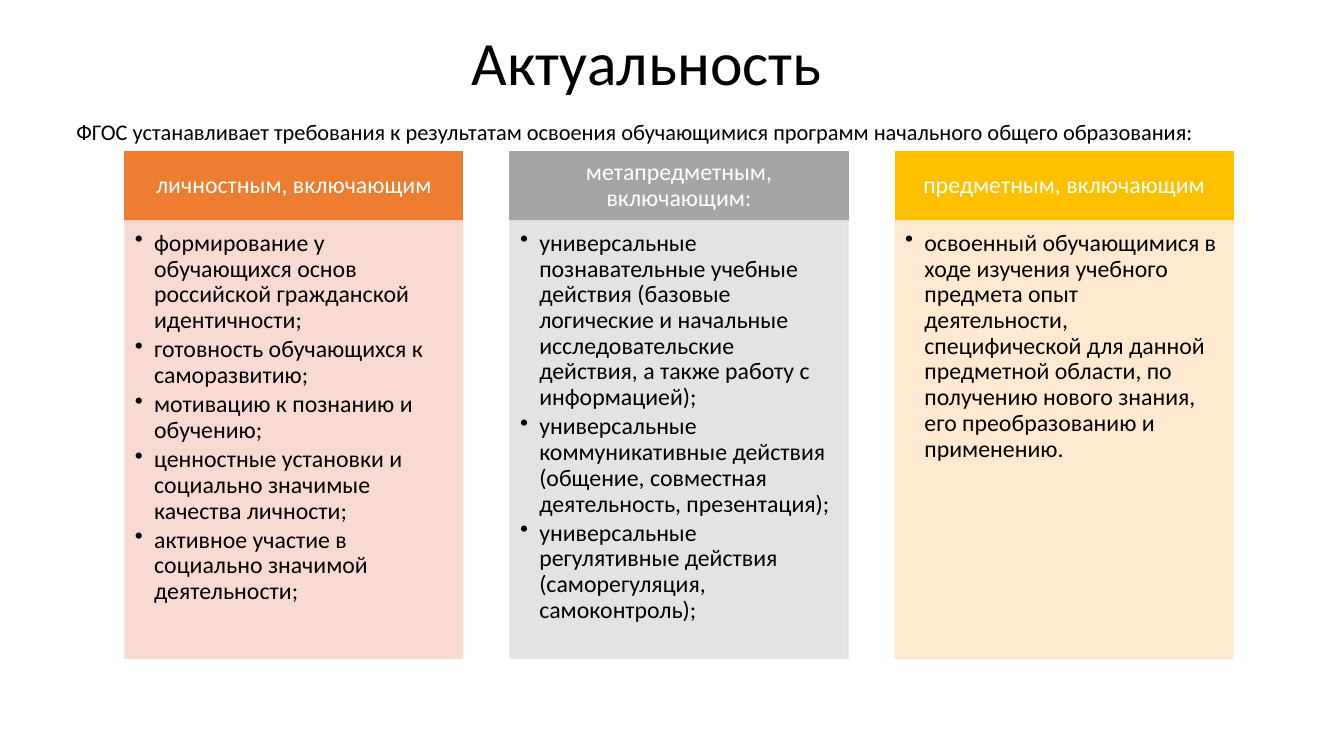
from lxml import etree
from pptx import Presentation
from pptx.dml.color import RGBColor
from pptx.enum.shapes import MSO_SHAPE
from pptx.enum.text import MSO_ANCHOR, PP_ALIGN
from pptx.oxml.ns import qn
from pptx.util import Inches, Pt

RECTANGLE = MSO_SHAPE.RECTANGLE
TOP, MIDDLE = MSO_ANCHOR.TOP, MSO_ANCHOR.MIDDLE
LEFT, CENTER = PP_ALIGN.LEFT, PP_ALIGN.CENTER

COLORS = {
    "text": "000000",
    "header_text": "FFFFFF",
    "personal": "ED7D31",
    "personal_tint": "F8D7CE",
    "meta": "A5A5A5",
    "meta_tint": "E1E1E1",
    "subject": "FFC000",
    "subject_tint": "FFE8CC",
}

COLUMNS = [
    ("personal", "личностным, включающим", [
        "формирование у обучающихся основ российской гражданской идентичности;",
        "готовность обучающихся к саморазвитию;",
        "мотивацию к познанию и обучению;",
        "ценностные установки и социально значимые качества личности;",
        "активное участие в социально значимой деятельности;",
    ]),
    ("meta", "метапредметным, включающим:", [
        "универсальные познавательные учебные действия (базовые логические и "
        "начальные исследовательские действия, а также работу с информацией);",
        "универсальные коммуникативные действия (общение, совместная "
        "деятельность, презентация);",
        "универсальные регулятивные действия (саморегуляция, самоконтроль);",
    ]),
    ("subject", "предметным, включающим", [
        "освоенный обучающимися в ходе изучения учебного предмета опыт "
        "деятельности, специфической для данной предметной области, по "
        "получению нового знания, его преобразованию и применению.",
    ]),
]

COLUMN_LEFT, COLUMN_STEP, COLUMN_WIDTH = 1.24, 3.82, 3.35
HEADER_TOP, HEADER_HEIGHT, BODY_HEIGHT = 1.5, 0.69, 4.34
HEADER_MARGINS = (0.13, 0.08, 0.13, 0.08)
BODY_MARGINS = (0.1, 0.1, 0.13, 0.15)
BULLET_INDENT = 0.19


class SlideBuilder:
    font_name = "Calibri"
    line_spacing = 0.9

    def __init__(self, slide):
        self.slide = slide

    def fill_text(self, shape, lines, size, color="text", anchor=TOP, align=LEFT,
                  margins=(0.1, 0.05, 0.1, 0.05), bullets=False):
        left, top, right, bottom = map(Inches, margins)
        frame_format = {
            "word_wrap": True, "vertical_anchor": anchor,
            "margin_left": left, "margin_top": top,
            "margin_right": right, "margin_bottom": bottom,
        }
        paragraph_format = {"alignment": align, "line_spacing": self.line_spacing}
        if bullets:
            paragraph_format["space_after"] = Pt(2.5)
        font_format = {"name": self.font_name, "size": Pt(size)}

        frame = shape.text_frame
        self.apply(frame, frame_format)
        for index, line in enumerate(lines):
            paragraph = frame.add_paragraph() if index else frame.paragraphs[0]
            if bullets:
                self.add_bullet(paragraph)
            self.apply(paragraph, paragraph_format)
            run = paragraph.add_run()
            run.text = line
            self.apply(run.font, font_format)
            run.font.color.rgb = RGBColor.from_string(COLORS[color])

    @staticmethod
    def apply(target, values):
        """Set every attribute named in values on target."""
        for name, value in values.items():
            setattr(target, name, value)

    @staticmethod
    def add_bullet(paragraph):
        properties = paragraph._p.get_or_add_pPr()
        properties.set("marL", str(Inches(BULLET_INDENT)))
        properties.set("indent", str(-Inches(BULLET_INDENT)))
        etree.SubElement(properties, qn("a:buChar")).set("char", "•")

    def text(self, box, line, size, **style):
        shape = self.slide.shapes.add_textbox(*map(Inches, box))
        self.fill_text(shape, [line], size, **style)

    def panel(self, box, fill, lines, opacity=100, **style):
        """Add a rectangle filled and outlined in one colour, with text."""
        shape = self.slide.shapes.add_shape(RECTANGLE, *map(Inches, box))
        shape.shadow.inherit = False
        shape.line.width = Pt(1)
        for paint in (shape.fill, shape.line.fill):
            paint.solid()
            paint.fore_color.rgb = RGBColor.from_string(COLORS[fill])
        if opacity < 100:
            for color in shape._element.spPr.iter(qn("a:srgbClr")):
                etree.SubElement(color, qn("a:alpha")).set("val", str(opacity * 1000))
        self.fill_text(shape, lines, 17, **style)


def main():
    presentation = Presentation()
    presentation.slide_width = Inches(13.33)
    presentation.slide_height = Inches(7.5)
    builder = SlideBuilder(presentation.slides.add_slide(presentation.slide_layouts[6]))

    builder.text((4.58, -0.07, 11.5, 1.45), "Актуальность", 44, anchor=MIDDLE)
    builder.text(
        (0.66, 1.15, 12.47, 0.47),
        "ФГОС устанавливает требования к результатам освоения обучающимися "
        "программ начального общего образования:", 16)

    for index, (name, heading, items) in enumerate(COLUMNS):
        left = COLUMN_LEFT + index * COLUMN_STEP
        builder.panel((left, HEADER_TOP, COLUMN_WIDTH, HEADER_HEIGHT), name, [heading],
                      color="header_text", anchor=MIDDLE, align=CENTER,
                      margins=HEADER_MARGINS)
        builder.panel((left, HEADER_TOP + HEADER_HEIGHT, COLUMN_WIDTH, BODY_HEIGHT),
                      f"{name}_tint", items, opacity=90, margins=BODY_MARGINS,
                      bullets=True)

    presentation.save("out.pptx")


if __name__ == "__main__":
    main()
